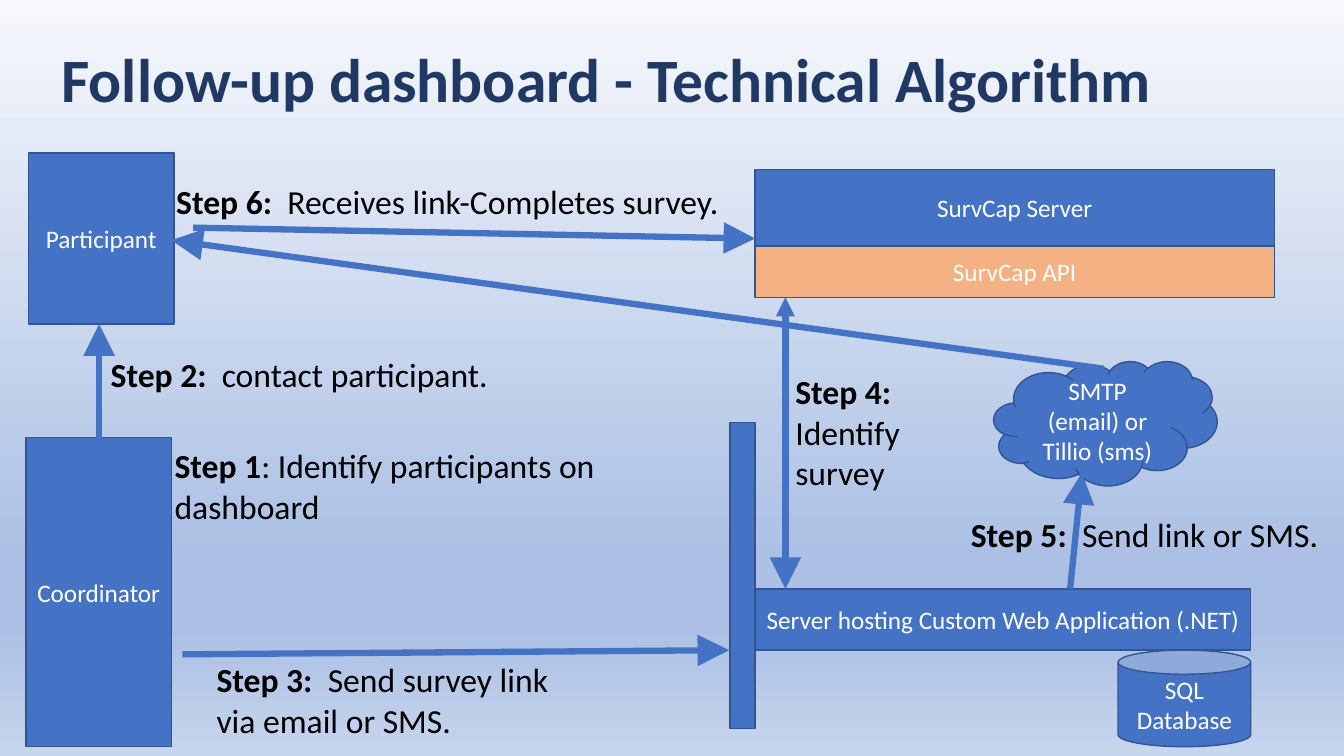
from dataclasses import dataclass

from lxml.etree import SubElement
from pptx import Presentation
from pptx.dml.color import RGBColor
from pptx.enum.shapes import MSO_CONNECTOR, MSO_SHAPE
from pptx.enum.text import MSO_ANCHOR, MSO_AUTO_SIZE, PP_ALIGN
from pptx.oxml.ns import qn
from pptx.slide import Slide
from pptx.text.text import TextFrame
from pptx.util import Inches, Pt

SLIDE_WIDTH = Inches(13.33)
SLIDE_HEIGHT = Inches(7.5)
COLUMNS = 160
ROWS = 90


@dataclass(frozen=True)
class Theme:
    """Colours, font and sizes of the slide."""

    font: str = "Calibri"
    title: str = "203864"
    blue: str = "4472C4"
    orange: str = "F4B183"
    outline: str = "325491"
    white: str = "FFFFFF"
    black: str = "000000"
    title_size: int = 44
    step_size: int = 24
    box_size: int = 18
    outline_width: float = 1
    arrow_width: float = 4.5
    background: tuple = ((0, "F6F8FC"), (74, "ABC0E4"), (83, "ABC0E4"), (100, "C7D5ED"))


THEME = Theme()


@dataclass(frozen=True)
class Area:
    """A rectangle in grid columns and rows."""

    column: float
    row: float
    columns: float
    rows: float

    def lengths(self) -> tuple:
        """Return left, top, width and height."""
        return across(self.column), down(self.row), across(self.columns), down(self.rows)


@dataclass(frozen=True)
class Box:
    """A filled shape with a centred label."""

    label: str
    area: Area
    kind: MSO_SHAPE = MSO_SHAPE.RECTANGLE
    fill: str = THEME.blue


@dataclass(frozen=True)
class Step:
    """A caption with a bold step name."""

    name: str
    action: str
    area: Area


@dataclass(frozen=True)
class Arrow:
    """An arrow between two grid points, given as column and row."""

    start: tuple
    end: tuple
    both_ways: bool = False


TITLE_AREA = Area(6.1, 1.1, 148.4, 17.4)

BOXES = (
    Box("SurvCap Server", Area(89.9, 20.2, 61.8, 9.1)),
    Box("Server hosting Custom Web Application (.NET)", Area(89.9, 70.1, 59, 7.3)),
    Box("SurvCap API", Area(89.9, 29.3, 61.8, 6.1), fill=THEME.orange),
    Box("Coordinator", Area(3.1, 52.1, 17.3, 36.8)),
    Box("Participant", Area(3.4, 18.2, 17.3, 20.4)),
    Box("SQL Database", Area(133.1, 77.4, 15.8, 11.5), MSO_SHAPE.CAN),
    Box("", Area(86.9, 50.3, 3, 36.4)),
    Box("SMTP (email) or Tillio (sms)", Area(118.3, 43, 26.6, 14.8), MSO_SHAPE.CLOUD),
)

ARROWS = (
    Arrow((11.8, 52.1), (11.8, 38.6)),
    Arrow((21.7, 77.9), (86.8, 77.4)),
    Arrow((127.4, 70.1), (128.8, 56.3)),
    Arrow((131.4, 43.9), (20.4, 28.6)),
    Arrow((93.5, 35.4), (93.5, 70.1), both_ways=True),
    Arrow((23, 27.1), (89.9, 28.4)),
)

STEPS = (
    Step("Step 1", ": Identify participants on dashboard", Area(19.6, 52.4, 64.3, 10.9)),
    Step("Step 2:  ", "contact participant.", Area(12, 41.5, 49.4, 6)),
    Step("Step 3:  ", "Send survey link via email or SMS.", Area(24.6, 77.9, 41.9, 10.9)),
    Step("Step 4:  ", "Identify survey", Area(93.5, 43.6, 20.6, 15.7)),
    Step("Step 5:  ", "Send link or SMS.", Area(114.4, 60.6, 43.9, 6)),
    Step("Step 6:  ", "Receives link-Completes survey.", Area(19.8, 21, 70.1, 6)),
)


def across(columns: float) -> int:
    """Convert grid columns to a length."""
    return round(SLIDE_WIDTH * columns / COLUMNS)


def down(rows: float) -> int:
    """Convert grid rows to a length."""
    return round(SLIDE_HEIGHT * rows / ROWS)


def add_text(frame: TextFrame, text: str, *, size: float, color: str,
             bold: bool = False, align: PP_ALIGN = PP_ALIGN.LEFT) -> None:
    """Append a formatted run to the first paragraph of a frame."""
    paragraph = frame.paragraphs[0]
    paragraph.alignment = align
    run = paragraph.add_run()
    run.text = text
    run.font.name = THEME.font
    run.font.size = Pt(size)
    run.font.bold = bold
    run.font.color.rgb = RGBColor.from_string(color)


def paint_background(slide: Slide) -> None:
    """Fill the slide with the vertical gradient."""
    fill = slide.background.fill
    fill.gradient()
    fill.gradient_angle = 270
    stops = slide.element.find(".//" + qn("a:gsLst"))
    for stop in list(stops):
        stops.remove(stop)
    for percent, color in THEME.background:
        stop = SubElement(stops, qn("a:gs"), pos=str(percent * 1000))
        SubElement(stop, qn("a:srgbClr"), val=color)


def set_title(slide: Slide, text: str) -> None:
    """Place and format the title placeholder."""
    title = slide.shapes.title
    title.left, title.top, title.width, title.height = TITLE_AREA.lengths()
    frame = title.text_frame
    frame.auto_size = MSO_AUTO_SIZE.NONE
    frame.vertical_anchor = MSO_ANCHOR.MIDDLE
    frame.paragraphs[0].line_spacing = 0.9
    add_text(frame, text, size=THEME.title_size, color=THEME.title, bold=True)


def draw_box(slide: Slide, box: Box) -> None:
    """Draw a shape and its label."""
    shape = slide.shapes.add_shape(box.kind, *box.area.lengths())
    shape.shadow.inherit = False
    shape.fill.solid()
    shape.fill.fore_color.rgb = RGBColor.from_string(box.fill)
    shape.line.color.rgb = RGBColor.from_string(THEME.outline)
    shape.line.width = Pt(THEME.outline_width)
    if box.label:
        shape.text_frame.word_wrap = True
        shape.text_frame.vertical_anchor = MSO_ANCHOR.MIDDLE
        add_text(shape.text_frame, box.label, size=THEME.box_size,
                 color=THEME.white, align=PP_ALIGN.CENTER)


def draw_arrow(slide: Slide, arrow: Arrow) -> None:
    """Draw a straight arrow with a large tip."""
    (column, row), (end_column, end_row) = arrow.start, arrow.end
    connector = slide.shapes.add_connector(
        MSO_CONNECTOR.STRAIGHT, across(column), down(row), across(end_column), down(end_row))
    connector.line.color.rgb = RGBColor.from_string(THEME.blue)
    connector.line.width = Pt(THEME.arrow_width)
    properties = connector.element.spPr
    line = properties.find(qn("a:ln"))
    if arrow.both_ways:
        SubElement(line, qn("a:headEnd"), type="triangle")
    SubElement(line, qn("a:tailEnd"), type="triangle", w="lg", len="lg")
    SubElement(properties, qn("a:effectLst"))


def draw_step(slide: Slide, step: Step) -> None:
    """Write a step caption."""
    frame = slide.shapes.add_textbox(*step.area.lengths()).text_frame
    frame.word_wrap = True
    frame.auto_size = MSO_AUTO_SIZE.SHAPE_TO_FIT_TEXT
    for text, bold in ((step.name, True), (step.action, False)):
        add_text(frame, text, size=THEME.step_size, color=THEME.black, bold=bold)


def main() -> None:
    """Build and save the slide."""
    presentation = Presentation()
    presentation.slide_width, presentation.slide_height = SLIDE_WIDTH, SLIDE_HEIGHT
    slide = presentation.slides.add_slide(presentation.slide_layouts.get_by_name("Title Only"))
    paint_background(slide)
    set_title(slide, "Follow-up dashboard - Technical Algorithm")
    for draw, items in ((draw_box, BOXES), (draw_arrow, ARROWS), (draw_step, STEPS)):
        for item in items:
            draw(slide, item)
    presentation.save("out.pptx")


if __name__ == "__main__":
    main()
